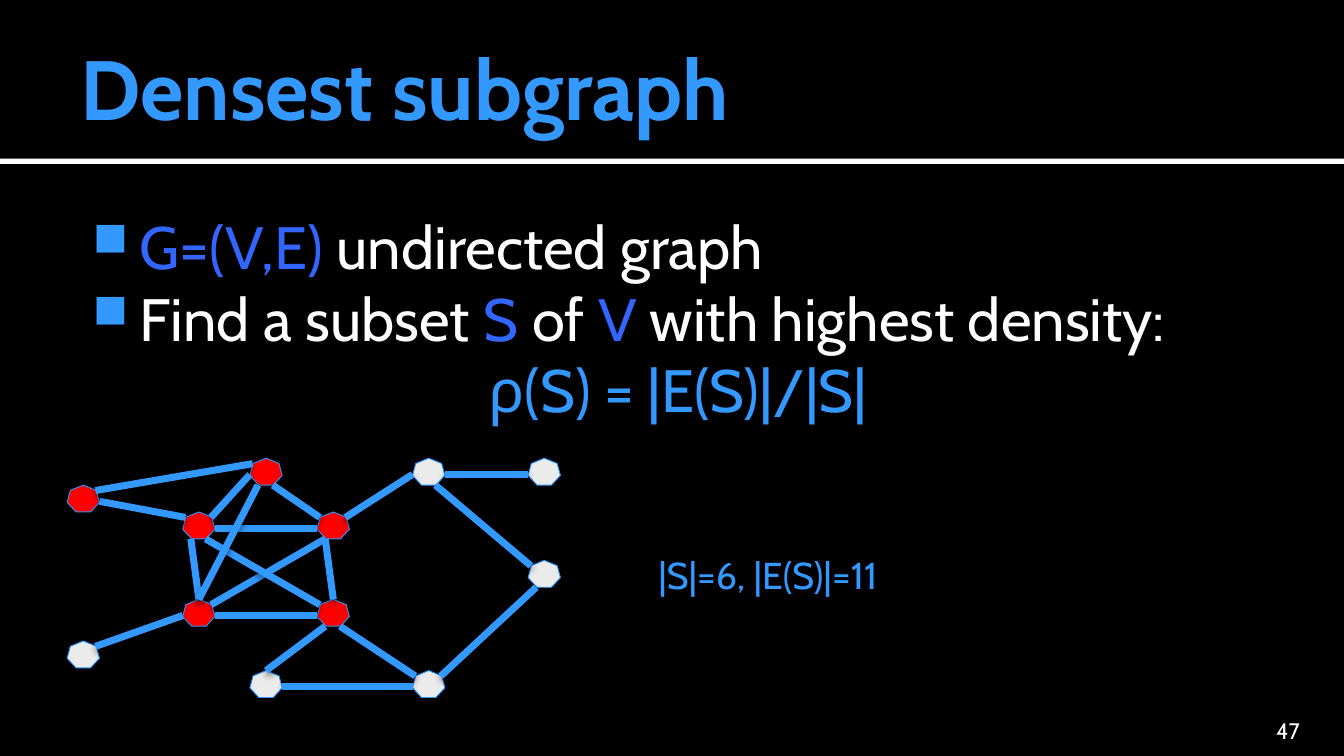
from typing import NamedTuple

from lxml import etree
from pptx import Presentation
from pptx.dml.color import RGBColor
from pptx.enum import shapes, text
from pptx.oxml import ns
from pptx.util import Emu, Pt

PX = 9144  # 100 px to the inch
FONT, BULLET_FONT = "Cabin", "OpenSymbol"
BLACK, WHITE, RED, GREY = "000000", "FFFFFF", "FF0000", "EBEBEB"
SKY, BLUE, OUTLINE = "3399FF", "3366FF", "2D96FE"
NODE_W, NODE_H = 24, 20


class Node(NamedTuple):
    left: int
    top: int
    fill: str


class Edge(NamedTuple):
    start: str
    start_corner: str
    end: str
    end_corner: str


class Span(NamedTuple):
    words: str
    color: str = WHITE


class Line(NamedTuple):
    spans: list[Span]
    align: text.PP_ALIGN = text.PP_ALIGN.LEFT
    bullet: bool = False
    hanging: bool = False


# Corners of a heptagon, as offsets from its left top
CORNERS = {"top": (12, 0), "upper right": (21, 4), "right": (24, 12), "lower right": (17, 20),
           "lower left": (6, 20), "left": (0, 12), "upper left": (2, 4)}

NODES = {
    "a": Node(136, 381, RED), "b": Node(136, 446, RED),
    "c": Node(236, 446, RED), "d": Node(236, 381, RED),
    "e": Node(186, 499, GREY), "f": Node(307, 499, GREY),
    "g": Node(393, 417, GREY), "h": Node(307, 341, GREY),
    "i": Node(393, 341, GREY), "j": Node(50, 361, RED),
    "k": Node(50, 477, GREY), "apex": Node(186, 341, RED),
}

EDGES = [
    Edge("a", "right", "d", "left"),
    Edge("a", "lower left", "b", "top"),
    Edge("b", "upper right", "d", "lower left"),
    Edge("a", "lower right", "c", "upper left"),
    Edge("d", "lower left", "c", "top"),
    Edge("b", "right", "c", "left"),
    Edge("a", "upper left", "j", "right"),
    Edge("b", "left", "k", "upper right"),
    Edge("d", "upper right", "h", "left"),
    Edge("c", "lower left", "e", "top"),
    Edge("c", "lower right", "f", "upper left"),
    Edge("e", "right", "f", "left"),
    Edge("f", "upper right", "g", "lower left"),
    Edge("g", "upper left", "h", "lower right"),
    Edge("h", "right", "i", "left"),
    Edge("apex", "left", "a", "upper right"),
    Edge("apex", "lower left", "b", "top"),
    Edge("apex", "lower right", "d", "upper left"),
    Edge("apex", "upper left", "j", "upper right"),
]


def px(*lengths: int) -> list[Emu]:
    return [Emu(length * PX) for length in lengths]


def rgb(color: str) -> RGBColor:
    return RGBColor.from_string(color)


def add_child(parent, tag: str, **attributes):
    child = etree.SubElement(parent, ns.qn(tag))
    for name, value in attributes.items():
        child.set(name, str(value))
    return child


def set_shadow(shape, blur: float) -> None:
    effects = add_child(shape._element.spPr, "a:effectLst")
    shadow = add_child(effects, "a:outerShdw", blurRad=Pt(blur), dist=Pt(2),
                       dir=90 * 60000, rotWithShape=0)
    color = add_child(shadow, "a:srgbClr", val=BLACK)
    add_child(color, "a:alpha", val=38000)


def draw_node(page, node: Node) -> None:
    shape = page.shapes.add_shape(shapes.MSO_SHAPE.HEPTAGON,
                                  *px(node.left, node.top, NODE_W, NODE_H))
    shape.fill.solid()
    shape.fill.fore_color.rgb = rgb(node.fill)
    shape.line.color.rgb = rgb(OUTLINE)
    shape.line.width = Pt(0.5)
    set_shadow(shape, 3.1)


def corner_point(name: str, corner: str) -> list[Emu]:
    node = NODES[name]
    dx, dy = CORNERS[corner]
    return px(node.left + dx, node.top + dy)


def draw_edge(page, edge: Edge) -> None:
    connector = page.shapes.add_connector(
        shapes.MSO_CONNECTOR.STRAIGHT,
        *corner_point(edge.start, edge.start_corner),
        *corner_point(edge.end, edge.end_corner))
    connector.line.color.rgb = rgb(SKY)
    connector.line.width = Pt(3.78)
    set_shadow(connector, 3.5)


def draw_text(page, place: tuple[int, int, int, int], lines: list[Line], size: int,
              insets: tuple[int, int, int, int] = (10, 5, 10, 5),
              anchor: text.MSO_ANCHOR = text.MSO_ANCHOR.TOP,
              bold: bool = False, wrap: bool = True) -> None:
    box = page.shapes.add_textbox(*px(*place))
    left, top, right, bottom = px(*insets)
    frame_format = {"margin_left": left, "margin_top": top, "margin_right": right,
                    "margin_bottom": bottom, "vertical_anchor": anchor, "word_wrap": wrap}
    for name, value in frame_format.items():
        setattr(box.text_frame, name, value)
    for index, line in enumerate(lines):
        para = box.text_frame.add_paragraph() if index else box.text_frame.paragraphs[0]
        para.alignment = line.align
        properties = para._p.get_or_add_pPr()
        if line.hanging:
            properties.set("marL", str(48 * PX))
            properties.set("indent", str(-35 * PX))
        if line.bullet:
            add_child(add_child(properties, "a:buClr"), "a:srgbClr", val=SKY)
            add_child(properties, "a:buSzPct", val=80000)
            add_child(properties, "a:buFont", typeface=BULLET_FONT)
            add_child(properties, "a:buChar", char="■")
        for part in line.spans:
            span = para.add_run()
            span.text = part.words
            for name, value in {"name": FONT, "size": Pt(size), "bold": bold}.items():
                setattr(span.font, name, value)
            span.font.color.rgb = rgb(part.color)


# A 16:9 page on black
deck = Presentation()
deck.slide_width = Emu(1000 * PX)
deck.slide_height = Emu(deck.slide_width * 9 // 16)
page = deck.slides.add_slide(deck.slide_layouts[6])
page.background.fill.solid()
page.background.fill.fore_color.rgb = rgb(BLACK)

# Rule under the title
rule = page.shapes.add_shape(shapes.MSO_SHAPE.RECTANGLE, *px(0, 118, 1000, 4))
rule.shadow.inherit = False
rule.fill.solid()
rule.fill.fore_color.rgb = rgb(WHITE)
rule.line.fill.background()

# Title, statement and page number
draw_text(page, (50, 13, 900, 103), [Line([Span("Densest subgraph", SKY)])], 45,
          insets=(10, 5, 5, 5), anchor=text.MSO_ANCHOR.MIDDLE, bold=True)
draw_text(page, (50, 146, 900, 379), [
    Line([Span("G=(V,E)", BLUE), Span(" undirected graph")], bullet=True, hanging=True),
    Line([Span("Find a subset "), Span("S", BLUE), Span(" of "), Span("V", BLUE),
          Span(" with highest density:")], bullet=True, hanging=True),
    Line([Span("ρ(S) = |E(S)|/|S|", SKY)], text.PP_ALIGN.CENTER, hanging=True),
], 32, insets=(6, 10, 10, 5))
draw_text(page, (897, 531, 80, 23), [Line([Span("47")], text.PP_ALIGN.RIGHT)], 12,
          insets=(10, 5, 10, 0), anchor=text.MSO_ANCHOR.BOTTOM)

# Graph and its counts
for node in NODES.values():
    draw_node(page, node)
for edge in EDGES:
    draw_edge(page, edge)
draw_text(page, (480, 406, 203, 44), [Line([Span("|S|=6, |E(S)|=11", SKY)])], 20, wrap=False)

deck.save("out.pptx")
